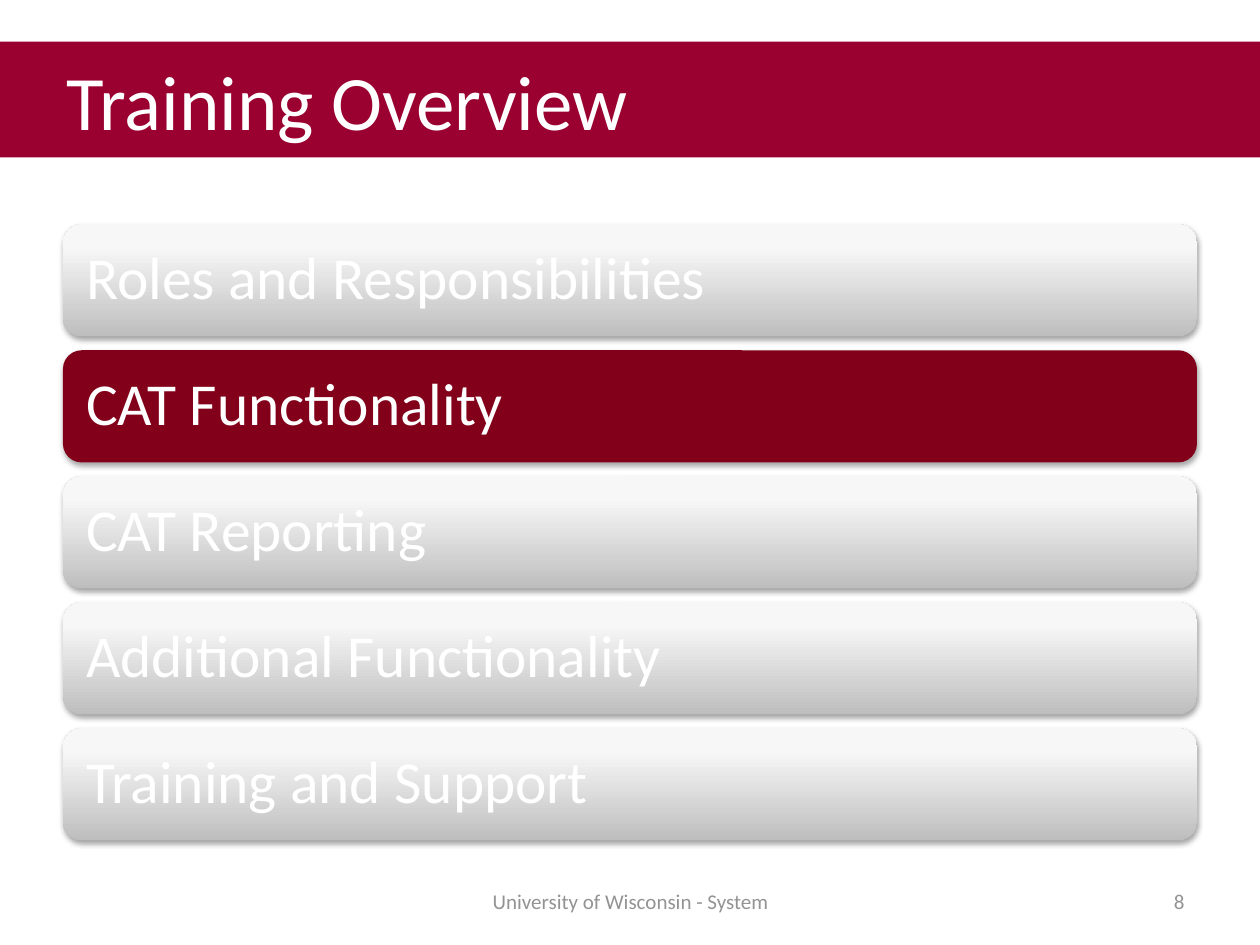
from copy import deepcopy

from lxml import etree
from pptx import Presentation
from pptx import util as u
from pptx.dml.color import RGBColor
from pptx.enum import shapes, text
from pptx.oxml.ns import qn

TOPICS = ["Roles and Responsibilities", "CAT Functionality", "CAT Reporting",
          "Additional Functionality", "Training and Support"]
CURRENT = "CAT Functionality"
STOPS = [(0, "BEBEBE"), (0.8, "F7F7F7"), (1, "F8F8F8")]


def rgb(code):
    return RGBColor.from_string(code)


def write(shape, words, size, color, align):
    """Fill a shape with one vertically centred line of text."""
    frame = shape.text_frame
    frame.word_wrap = True
    frame.auto_size = text.MSO_AUTO_SIZE.NONE
    frame.vertical_anchor = text.MSO_ANCHOR.MIDDLE
    frame.text = words
    line = frame.paragraphs[0]
    line.alignment = align
    font = line.runs[0].font
    font.name, font.size = "Calibri", u.Pt(size)
    font.color.rgb = rgb(color)
    return frame


prs = Presentation()
prs.slide_width, prs.slide_height = u.Inches(10), u.Inches(7.5)
slide = prs.slides.add_slide(prs.slide_layouts[5])

# Title band
title = slide.shapes.title
title.left, title.top = u.Inches(0), u.Inches(0.33)
title.width, title.height = u.Inches(10), u.Inches(0.92)
title.fill.solid()
title.fill.fore_color.rgb = rgb("9A0030")
frame = write(title, "Training Overview", 44, "FFFFFF", text.PP_ALIGN.LEFT)
frame.margin_left = u.Inches(0.53)

# Topic bars, one per inch, with the current one in red
for i, topic in enumerate(TOPICS):
    bar = slide.shapes.add_shape(
        shapes.MSO_SHAPE.ROUNDED_RECTANGLE,
        u.Inches(0.5), u.Inches(1.78 + i), u.Inches(9), u.Inches(0.89))
    bar.line.fill.background()
    if topic == CURRENT:
        bar.fill.solid()
        bar.fill.fore_color.rgb = rgb("82001A")
    else:
        bar.fill.gradient()
        bar.fill.gradient_angle = 90
        stops = bar._element.spPr.find(".//" + qn("a:gsLst"))
        stops.append(deepcopy(stops[-1]))
        for stop, (spot, color) in zip(bar.fill.gradient_stops, STOPS):
            stop.position = spot
            stop.color.rgb = rgb(color)

    bar.shadow.inherit = False
    effects = bar._element.spPr.find(qn("a:effectLst"))
    shade = etree.SubElement(
        effects, qn("a:outerShdw"), blurRad=str(u.Pt(3.1)),
        dist=str(u.Pt(1.8)), dir="5400000", rotWithShape="0")
    black = etree.SubElement(shade, qn("a:srgbClr"), val="000000")
    etree.SubElement(black, qn("a:alpha"), val="35000")

    frame = write(bar, topic, 34, "FFFFFF", text.PP_ALIGN.LEFT)
    frame.margin_left = frame.margin_right = u.Inches(0.14)
    frame.margin_top = frame.margin_bottom = u.Inches(0.14)
    frame.paragraphs[0].line_spacing = 0.9

# Footer and page number
for words, left, width, align in [
        ("University of Wisconsin - System", 3.42, 3.17, text.PP_ALIGN.CENTER),
        ("8", 7.17, 2.33, text.PP_ALIGN.RIGHT)]:
    box = slide.shapes.add_textbox(
        u.Inches(left), u.Inches(6.95), u.Inches(width), u.Inches(0.4))
    write(box, words, 12, "939393", align)

prs.save("out.pptx")
